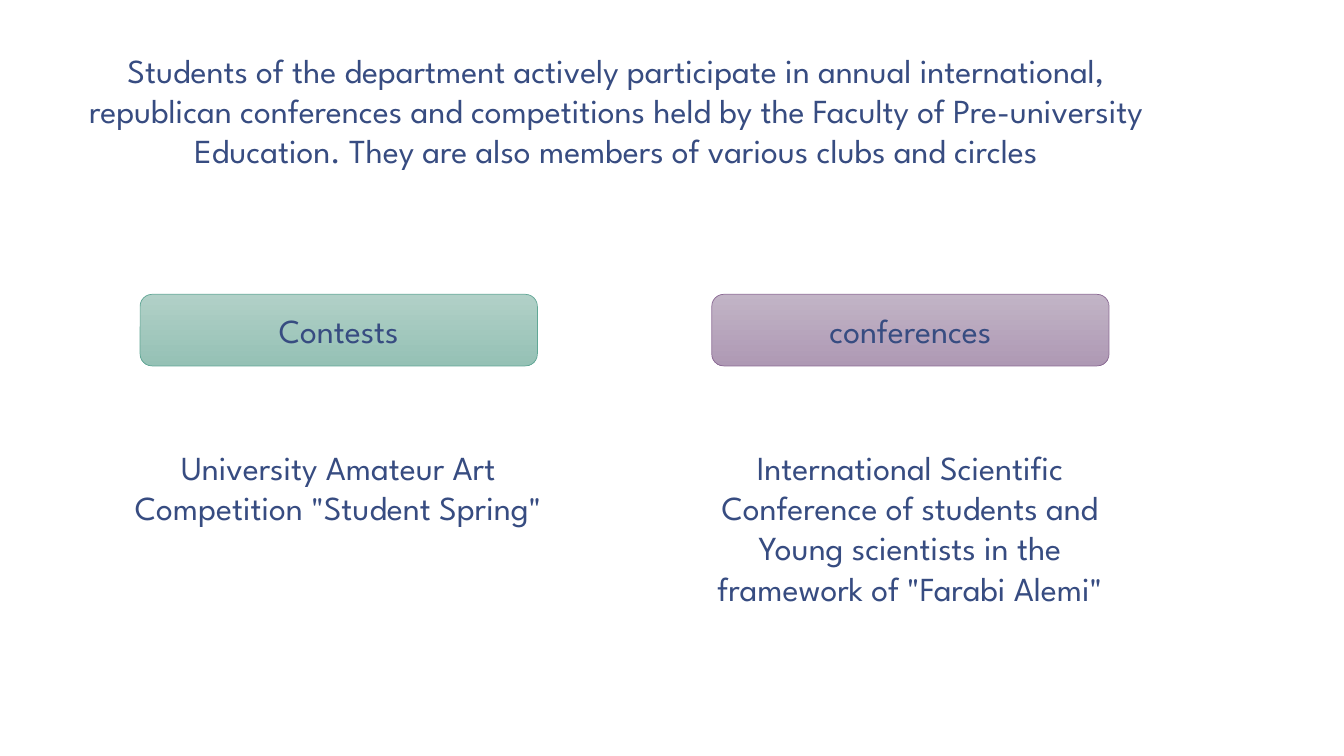
from pptx import Presentation
from pptx.dml.color import RGBColor
from pptx.enum.shapes import MSO_SHAPE
from pptx.enum.text import MSO_ANCHOR, MSO_AUTO_SIZE, PP_ALIGN
from pptx.util import Inches, Pt

FONT = "League Spartan"
NAVY = RGBColor(0x37, 0x4C, 0x81)
GREEN_LIGHT = RGBColor(0xB1, 0xD0, 0xC7)
GREEN_DARK = RGBColor(0x95, 0xC1, 0xB5)
GREEN_LINE = RGBColor(0x61, 0xA7, 0x96)
PURPLE_LIGHT = RGBColor(0xC2, 0xB4, 0xC6)
PURPLE_DARK = RGBColor(0xAE, 0x99, 0xB4)
PURPLE_LINE = RGBColor(0x8B, 0x6A, 0x94)

INTRO = ("Students of the department actively participate in annual international, "
         "republican conferences and competitions held by the Faculty of "
         "Pre-university Education. They are also members of various clubs and circles")

# Heading, heading left, light, dark, line, text, text left, text width, text height
COLUMNS = [
    ("Contests", 1.39, GREEN_LIGHT, GREEN_DARK, GREEN_LINE,
     'University Amateur Art Competition "Student Spring"', 1.23, 4.25, 1.31),
    ("conferences", 7.06, PURPLE_LIGHT, PURPLE_DARK, PURPLE_LINE,
     "International Scientific Conference of students and Young scientists "
     'in the framework of "Farabi Alemi"', 6.98, 4.09, 2.12),
]


def write(shape, text, anchor=MSO_ANCHOR.TOP):
    tf = shape.text_frame
    tf.text = text
    tf.word_wrap = True
    tf.auto_size = MSO_AUTO_SIZE.NONE
    tf.vertical_anchor = anchor
    p = tf.paragraphs[0]
    p.alignment = PP_ALIGN.CENTER
    font = p.runs[0].font
    font.name, font.size = FONT, Pt(24)
    font.color.rgb = NAVY


def add_intro(s):
    title = s.shapes.title
    title.left, title.top = Inches(0.44), Inches(0.44)
    title.width, title.height = Inches(11.34), Inches(1.72)
    write(title, INTRO)


def add_heading(s, text, left, light, dark, line):
    box = s.shapes.add_shape(MSO_SHAPE.ROUNDED_RECTANGLE, Inches(left), Inches(2.92),
                             Inches(3.94), Inches(0.71))
    box.shadow.inherit = False
    box.fill.gradient()
    box.fill.gradient_angle = 270
    for stop, color in zip(box.fill.gradient_stops, (light, dark)):
        stop.color.rgb = color
    box.line.color.rgb = line
    box.line.width = Pt(0.5)
    write(box, text, MSO_ANCHOR.MIDDLE)


def add_description(s, text, left, width, height):
    box = s.shapes.add_textbox(Inches(left), Inches(4.38), Inches(width), Inches(height))
    write(box, text)


def main():
    prs = Presentation()
    prs.slide_width, prs.slide_height = Inches(13.33), Inches(7.5)
    s = prs.slides.add_slide(prs.slide_layouts[5])

    # Introduction
    add_intro(s)

    # Activity columns
    for heading, left, light, dark, line, text, text_left, width, height in COLUMNS:
        add_heading(s, heading, left, light, dark, line)
        add_description(s, text, text_left, width, height)

    prs.save("out.pptx")


if __name__ == "__main__":
    main()
